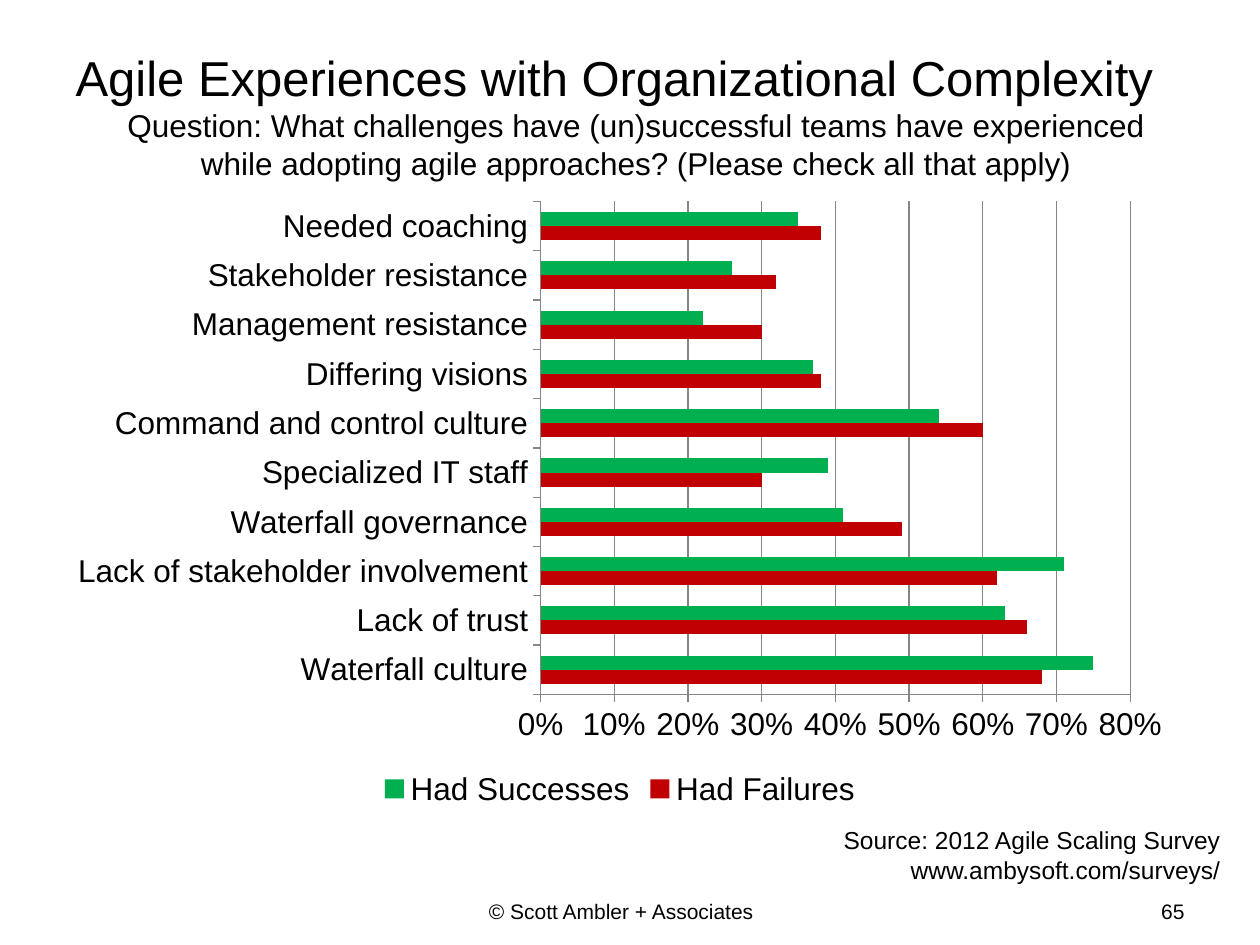
"""Build the slide on agile experiences with organizational complexity."""
from lxml import etree
from pptx import Presentation
from pptx.chart.data import CategoryChartData
from pptx.dml.color import RGBColor
from pptx.enum.chart import XL_CHART_TYPE as ChartType, XL_LEGEND_POSITION as LegendPosition
from pptx.enum.chart import XL_TICK_MARK as TickMark
from pptx.enum.text import MSO_ANCHOR as Anchor, PP_ALIGN as Align
from pptx.oxml.ns import qn
from pptx.util import Emu, Pt

SCALE = 914400 / 126
BLACK = RGBColor(0x00, 0x00, 0x00)
GRAY = RGBColor(0x86, 0x86, 0x86)
RED = RGBColor(0xC0, 0x00, 0x00)
GREEN = RGBColor(0x00, 0xB0, 0x50)

CHALLENGES = [
    ("Waterfall culture", 0.68, 0.75),
    ("Lack of trust", 0.66, 0.63),
    ("Lack of stakeholder involvement", 0.62, 0.71),
    ("Waterfall governance", 0.49, 0.41),
    ("Specialized IT staff", 0.30, 0.39),
    ("Command and control culture", 0.60, 0.54),
    ("Differing visions", 0.38, 0.37),
    ("Management resistance", 0.30, 0.22),
    ("Stakeholder resistance", 0.32, 0.26),
    ("Needed coaching", 0.38, 0.35),
]
PLOT_LAYOUT = {"x": 0.43, "y": 0.02, "w": 0.52, "h": 0.79}
QUESTION = ("Question: What challenges have (un)successful teams have experienced "
            "while adopting agile approaches? (Please check all that apply)")


def px(*lengths):
    return [Emu(round(length * SCALE)) for length in lengths]


def set_font(font, size):
    for name, value in {"name": "Arial", "size": Pt(size), "bold": False}.items():
        setattr(font, name, value)
    font.color.rgb = BLACK


def fill_text(frame, lines, size, align):
    frame.text = "\n".join(lines)
    for para in frame.paragraphs:
        para.alignment = align
        for span in para.runs:
            set_font(span.font, size)


def place_title(page, text, area):
    title = page.shapes.title
    for name, value in zip(("left", "top", "width", "height"), px(*area)):
        setattr(title, name, value)
    title.text_frame.vertical_anchor = Anchor.MIDDLE
    fill_text(title.text_frame, [text], 28, Align.LEFT)


def add_text(page, lines, area, size, align, wrap=True):
    box = page.shapes.add_textbox(*px(*area))
    box.text_frame.word_wrap = wrap
    fill_text(box.text_frame, lines, size, align)


def set_plot_layout(chart):
    plot_area = chart._chartSpace.chart.plotArea
    for old in plot_area.findall(qn("c:layout")):
        plot_area.remove(old)
    layout = etree.Element(qn("c:layout"))
    manual = etree.SubElement(layout, qn("c:manualLayout"))
    settings = {"layoutTarget": "inner", "xMode": "edge", "yMode": "edge", **PLOT_LAYOUT}
    for name, value in settings.items():
        etree.SubElement(manual, qn(f"c:{name}")).set("val", str(value))
    plot_area.insert(0, layout)


def format_axis(axis):
    axis.major_tick_mark = TickMark.OUTSIDE
    axis.minor_tick_mark = TickMark.NONE
    axis.format.line.color.rgb = GRAY


def add_bar_chart(page, area):
    names, failures, successes = zip(*CHALLENGES)
    data = CategoryChartData(number_format="0%")
    data.categories = names
    data.add_series("Had Failures", failures)
    data.add_series("Had Successes", successes)
    chart = page.shapes.add_chart(ChartType.BAR_CLUSTERED, *px(*area), data).chart
    set_font(chart.font, 18)
    chart.has_title = False
    chart.has_legend = True
    chart.legend.position = LegendPosition.BOTTOM
    chart.legend.include_in_layout = False

    plot = chart.plots[0]
    for name, value in {"gap_width": 150, "overlap": 0, "vary_by_categories": False}.items():
        setattr(plot, name, value)
    for series, color in zip(plot.series, (RED, GREEN)):
        series.format.fill.solid()
        series.format.fill.fore_color.rgb = color

    format_axis(chart.category_axis)
    values = chart.value_axis
    format_axis(values)
    limits = {"minimum_scale": 0, "maximum_scale": 0.8, "major_unit": 0.1,
              "has_major_gridlines": True}
    for name, value in limits.items():
        setattr(values, name, value)
    values.major_gridlines.format.line.color.rgb = GRAY
    values.tick_labels.number_format = "0%"
    values.tick_labels.number_format_is_linked = False
    set_plot_layout(chart)


def main():
    deck = Presentation()
    deck.slide_width, deck.slide_height = px(1260, 945)
    page = deck.slides.add_slide(deck.slide_layouts[5])
    place_title(page, "Agile Experiences with Organizational Complexity", (63, 38, 1134, 78))
    add_bar_chart(page, (53, 189, 1134, 624))
    add_text(page, ["© Scott Ambler + Associates"], (136, 892, 630, 34), 12, Align.RIGHT)
    add_text(page, [QUESTION], (105, 100, 1062, 89), 18, Align.CENTER)
    add_text(page, ["65"], (1071, 892, 126, 34), 12, Align.RIGHT)
    add_text(page, ["Source: 2012 Agile Scaling Survey", "www.ambysoft.com/surveys/"],
             (829, 819, 404, 72), 14, Align.RIGHT, wrap=False)
    deck.save("out.pptx")


if __name__ == "__main__":
    main()
